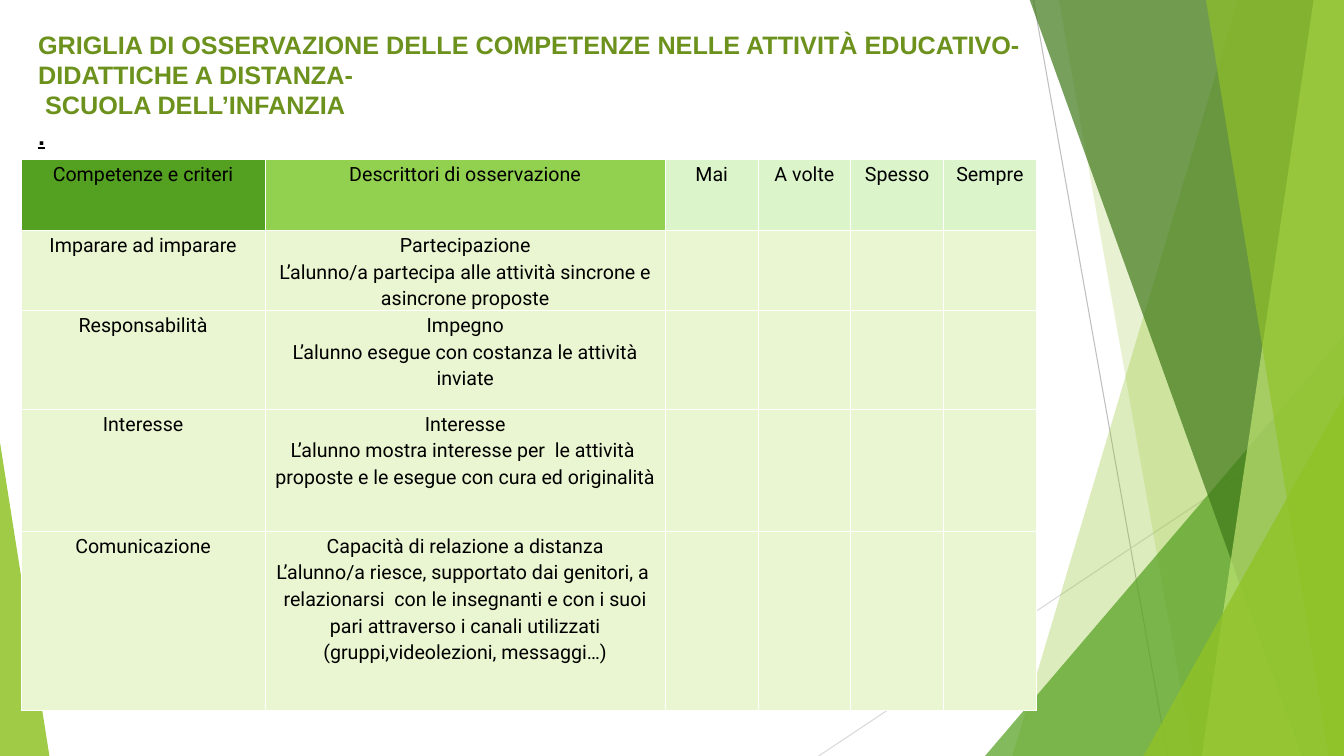
from lxml import etree
from pptx import Presentation
from pptx.dml.color import RGBColor
from pptx.enum.shapes import MSO_CONNECTOR, MSO_SHAPE
from pptx.enum.text import MSO_ANCHOR, PP_ALIGN
from pptx.oxml.ns import qn
from pptx.util import Inches, Pt

COLORS = {
    "lime": "90C226", "green": "54A021", "forest": "3F7819", "pale": "C0E474",
    "head": "92D050", "scale": "DBF4CA", "body": "EAF6D1", "title": "6C921D",
    "black": "000000", "white": "FFFFFF", "grey": "BFBFBF", "silver": "D9D9D9",
}
WIDTH, HEIGHT = 13.33, 7.5
RAYS = [((10.25, 0), (11.58, 7.5), "grey"), ((13.33, 4.03), (8.12, 7.5), "silver")]
FACETS = [
    ("band", 12.28, 10.04, "lime", 30),
    ("band", 10.5, 11.83, "lime", 20),
    ("peak", 9.77, 3.33, "green", 72),
    ("band", 10.21, 12.91, "forest", 70),
    ("band", 13.03, 11.92, "pale", 70),
    ("band", 11.96, 13.18, "lime", 65),
    ("peak", 11.34, 3.93, "lime", 80),
]
TITLE = [
    ("GRIGLIA DI OSSERVAZIONE DELLE COMPETENZE NELLE ATTIVITÀ EDUCATIVO-DIDATTICHE A DISTANZA-",
     "title", False),
    (" SCUOLA DELL’INFANZIA", "title", False),
    (".", "black", True),
]
COL_WIDTHS = [2.42, 3.97] + [0.92] * 4
ROW_HEIGHTS = [0.71, 0.79, 0.98, 1.21, 1.78]
HEADERS = ["Competenze e criteri", "Descrittori di osservazione",
           "Mai", "A volte", "Spesso", "Sempre"]
HEADER_FILLS = ["green", "head"] + ["scale"] * 4
CRITERIA = [
    ("Imparare ad imparare",
     "Partecipazione\nL’alunno/a partecipa alle attività sincrone e asincrone proposte"),
    ("Responsabilità",
     "Impegno\nL’alunno esegue con costanza le attività inviate"),
    ("Interesse",
     "Interesse\nL’alunno mostra interesse per  le attività  proposte e le esegue "
     "con cura ed originalità"),
    ("Comunicazione",
     "Capacità di relazione a distanza\nL’alunno/a riesce, supportato dai genitori, a  "
     "relazionarsi  con le insegnanti e con i suoi pari attraverso i canali utilizzati\n"
     "(gruppi,videolezioni, messaggi…)"),
]


def rgb(name):
    """Return the named colour."""
    return RGBColor.from_string(COLORS[name])


def paint(sp, color, alpha):
    """Fill a shape with a translucent colour and no outline."""
    sp.shadow.inherit = False
    sp.line.fill.background()
    sp.fill.solid()
    sp.fill.fore_color.rgb = rgb(color)
    clr = sp._element.spPr.find(".//" + qn("a:srgbClr"))
    etree.SubElement(clr, qn("a:alpha")).set("val", str(alpha * 1000))


def add_ray(slide, start, end, color):
    """Draw one thin decorative line."""
    line = slide.shapes.add_connector(
        MSO_CONNECTOR.STRAIGHT, *(Inches(v) for v in start + end))
    line.line.color.rgb = rgb(color)
    line.line.width = Pt(0.75)
    etree.SubElement(line._element.spPr, qn("a:effectLst"))


def add_band(slide, top_x, bottom_x, right, bottom, color, alpha):
    """Draw a slanted band that reaches the right edge."""
    corners = [(top_x, -0.01), (right, -0.01), (right, bottom), (bottom_x, bottom)]
    points = [(Inches(x), Inches(y)) for x, y in corners]
    builder = slide.shapes.build_freeform(*points[0], scale=1.0)
    builder.add_line_segments(points[1:], close=True)
    paint(builder.convert_to_shape(), color, alpha)


def add_peak(slide, left, top, width, height, apex, color, alpha):
    """Draw a triangle with its apex at the given share of its width."""
    sp = slide.shapes.add_shape(MSO_SHAPE.ISOSCELES_TRIANGLE, Inches(left), Inches(top),
                                Inches(width), Inches(height))
    sp.adjustments[0] = apex
    paint(sp, color, alpha)


def add_facets(slide, right, bottom):
    """Draw the green backdrop up to the right and bottom edges."""
    for ray in RAYS:
        add_ray(slide, *ray)
    for kind, a, b, color, alpha in FACETS:
        if kind == "band":
            add_band(slide, a, b, right, bottom, color, alpha)
        else:
            add_peak(slide, a, b, right - a, bottom - b, 1, color, alpha)
    add_peak(slide, 0, 4.39, 0.49, bottom - 4.39, 0, "lime", 85)


def add_borders(cell):
    """Give a cell thin white borders."""
    tcPr = cell._tc.get_or_add_tcPr()
    for i, side in enumerate(("lnL", "lnR", "lnT", "lnB")):
        ln = etree.Element(qn("a:" + side), w=str(Pt(1)))
        fill = etree.SubElement(ln, qn("a:solidFill"))
        etree.SubElement(fill, qn("a:srgbClr")).set("val", COLORS["white"])
        tcPr.insert(i, ln)


def fill_cell(cell, text, color):
    """Style a cell and write its centred lines."""
    cell.fill.solid()
    cell.fill.fore_color.rgb = rgb(color)
    add_borders(cell)
    cell.margin_left = cell.margin_right = Inches(0.05)
    cell.margin_top = cell.margin_bottom = 0
    cell.vertical_anchor = MSO_ANCHOR.TOP
    tf = cell.text_frame
    for i, line in enumerate(text.split("\n") if text else []):
        p = tf.add_paragraph() if i else tf.paragraphs[0]
        p.alignment = PP_ALIGN.CENTER
        p.line_spacing = 1.15
        r = p.add_run()
        r.text = line
        r.font.size = Pt(14)
        r.font.name = "Roboto"
        r.font.color.rgb = rgb("black")


def add_grid(slide, left, top):
    """Build the observation table."""
    table = slide.shapes.add_table(
        len(ROW_HEIGHTS), len(COL_WIDTHS), Inches(left), Inches(top),
        Inches(sum(COL_WIDTHS)), Inches(sum(ROW_HEIGHTS))).table
    table.first_row = table.horz_banding = False
    for col, width in zip(table.columns, COL_WIDTHS):
        col.width = Inches(width)
    for row, height in zip(table.rows, ROW_HEIGHTS):
        row.height = Inches(height)
    for c, (text, color) in enumerate(zip(HEADERS, HEADER_FILLS)):
        fill_cell(table.cell(0, c), text, color)
    for r, criterion in enumerate(CRITERIA, 1):
        for c in range(len(COL_WIDTHS)):
            fill_cell(table.cell(r, c), criterion[c] if c < 2 else "", "body")


def add_title(slide, left, top, width, height):
    """Write the heading."""
    tf = slide.shapes.add_textbox(Inches(left), Inches(top), Inches(width),
                                  Inches(height)).text_frame
    tf.word_wrap = True
    for i, (text, color, underline) in enumerate(TITLE):
        p = tf.add_paragraph() if i else tf.paragraphs[0]
        r = p.add_run()
        r.text = text
        r.font.size = Pt(18)
        r.font.name = "Arial"
        r.font.bold = True
        r.font.underline = underline
        r.font.color.rgb = rgb(color)


def main():
    """Build and save the slide."""
    prs = Presentation()
    prs.slide_width, prs.slide_height = Inches(WIDTH), Inches(HEIGHT)
    slide = prs.slides.add_slide(prs.slide_layouts[6])
    add_facets(slide, WIDTH, HEIGHT)
    add_grid(slide, 0.21, 1.58)
    add_title(slide, 0.28, 0.24, 9.99, 1.62)
    prs.save("out.pptx")


if __name__ == "__main__":
    main()
